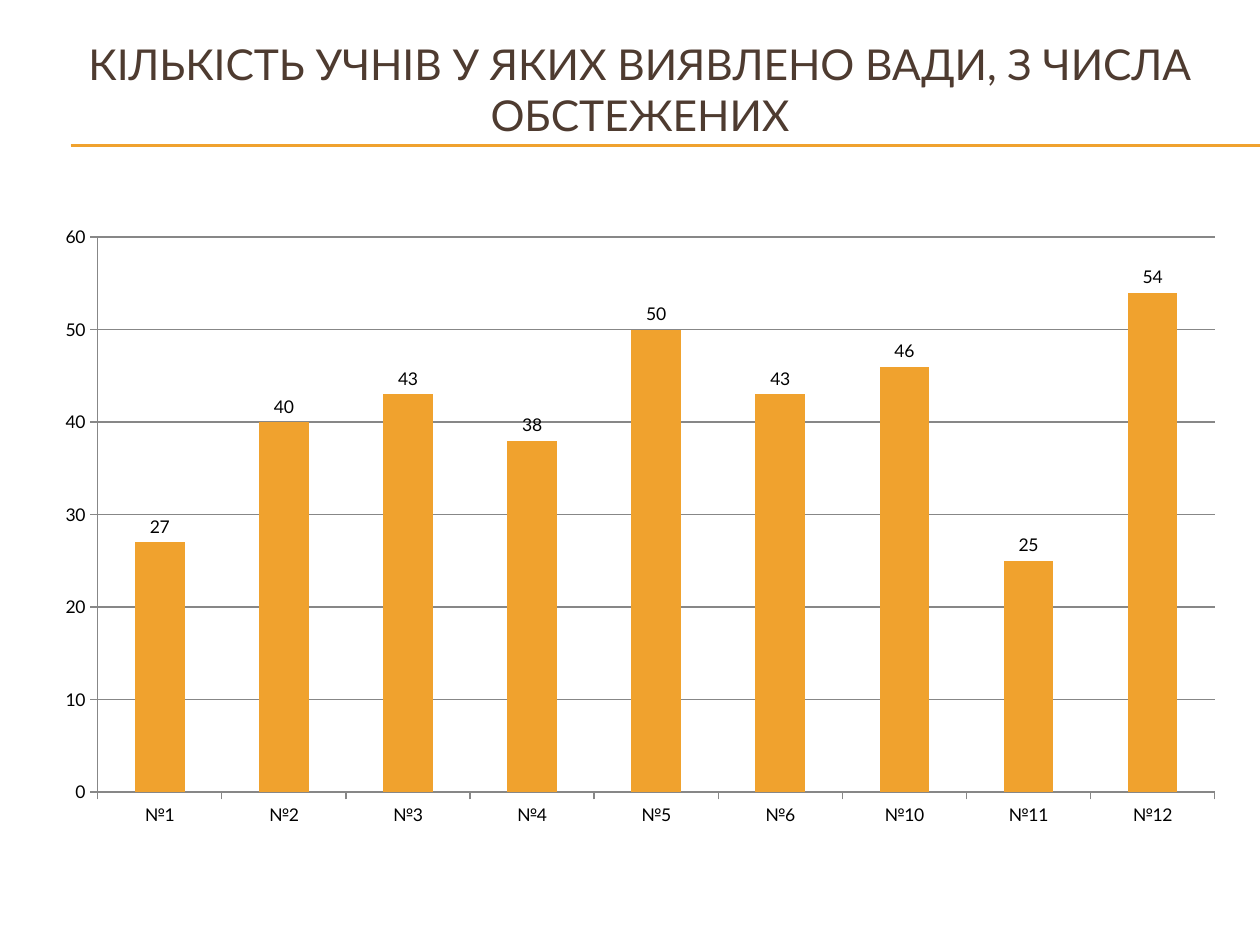
from dataclasses import dataclass

from lxml import etree
from pptx import Presentation
from pptx.chart.data import CategoryChartData
from pptx.dml.color import RGBColor
from pptx.enum.chart import XL_CHART_TYPE, XL_LABEL_POSITION, XL_TICK_MARK
from pptx.enum.shapes import MSO_CONNECTOR
from pptx.enum.text import MSO_ANCHOR, PP_ALIGN
from pptx.oxml.ns import qn
from pptx.util import Inches, Pt

COLUMNS = XL_CHART_TYPE.COLUMN_CLUSTERED
ABOVE_BAR = XL_LABEL_POSITION.OUTSIDE_END
OUTSIDE = XL_TICK_MARK.OUTSIDE
STRAIGHT = MSO_CONNECTOR.STRAIGHT
TOP = MSO_ANCHOR.TOP
CENTER = PP_ALIGN.CENTER

WIDTH, HEIGHT = Inches(10), Inches(7.5)
FONT = "Lato"
COLORS = {"accent": "F0A22E", "title": "4E3B30", "text": "000000", "axis": "878787"}
TITLE = "КІЛЬКІСТЬ УЧНІВ У ЯКИХ ВИЯВЛЕНО ВАДИ, З ЧИСЛА ОБСТЕЖЕНИХ"
DEFECTS_BY_SCHOOL = {
    "№1": 27, "№2": 40, "№3": 43, "№4": 38, "№5": 50,
    "№6": 43, "№10": 46, "№11": 25, "№12": 54,
}


@dataclass(frozen=True)
class Area:
    left: float
    top: float
    width: float
    height: float

    def lengths(self) -> tuple[int, int, int, int]:
        return (int(WIDTH * self.left), int(HEIGHT * self.top),
                int(WIDTH * self.width), int(HEIGHT * self.height))


@dataclass(frozen=True)
class Rule:
    left: float
    right: float
    top: float


TITLE_AREA = Area(0.033, 0.04, 0.95, 0.15)
CHART_AREA = Area(0.033, 1.7 / 7.5, 0.95, 0.66)
RULES = [Rule(0.056, 1, inches / 7.5) for inches in (1.15, 1.16)]


def color(name: str) -> RGBColor:
    return RGBColor.from_string(COLORS[name])


def style_line(line, name: str) -> None:
    line.color.rgb = color(name)
    line.width = Pt(0.75)


def add_rule(page, rule: Rule) -> None:
    height = int(HEIGHT * rule.top)
    connector = page.shapes.add_connector(
        STRAIGHT, int(WIDTH * rule.left), height, int(WIDTH * rule.right), height)
    style_line(connector.line, "accent")
    etree.SubElement(connector._element.spPr, qn("a:effectLst"))


def add_text(page, text: str, *, area: Area, size: float, color_name: str,
             align=CENTER, anchor=TOP) -> None:
    frame = page.shapes.add_textbox(*area.lengths()).text_frame
    frame.word_wrap = True
    frame.vertical_anchor = anchor
    frame.margin_top = frame.margin_bottom = 0
    para = frame.paragraphs[0]
    para.alignment = align
    span = para.add_run()
    span.text = text
    span.font.name = FONT
    span.font.size = Pt(size)
    span.font.color.rgb = color(color_name)


def add_school_chart(page, values: dict[str, int], area: Area) -> None:
    data = CategoryChartData()
    data.categories = list(values)
    data.add_series("Series 1", list(values.values()))
    chart = page.shapes.add_chart(COLUMNS, *area.lengths(), data).chart
    chart.has_title = False
    chart.has_legend = False
    chart.font.name = FONT
    chart.font.size = Pt(10)
    chart.font.color.rgb = color("text")

    for axis in (chart.category_axis, chart.value_axis):
        axis.major_tick_mark = OUTSIDE
        style_line(axis.format.line, "axis")
    chart.value_axis.minimum_scale = 0
    chart.value_axis.maximum_scale = 60
    chart.value_axis.major_unit = 10
    style_line(chart.value_axis.major_gridlines.format.line, "axis")

    plot = chart.plots[0]
    plot.gap_width = 150
    plot.vary_by_categories = False
    series = plot.series[0]
    series.format.fill.solid()
    series.format.fill.fore_color.rgb = color("accent")
    labels = series.data_labels
    labels.show_value = True
    labels.position = ABOVE_BAR


def main() -> None:
    deck = Presentation()
    deck.slide_width, deck.slide_height = WIDTH, HEIGHT
    page = deck.slides.add_slide(deck.slide_layouts[6])
    for rule in RULES:
        add_rule(page, rule)
    add_text(page, TITLE, area=TITLE_AREA, size=24.3, color_name="title")
    add_school_chart(page, DEFECTS_BY_SCHOOL, CHART_AREA)
    deck.save("out.pptx")


if __name__ == "__main__":
    main()
